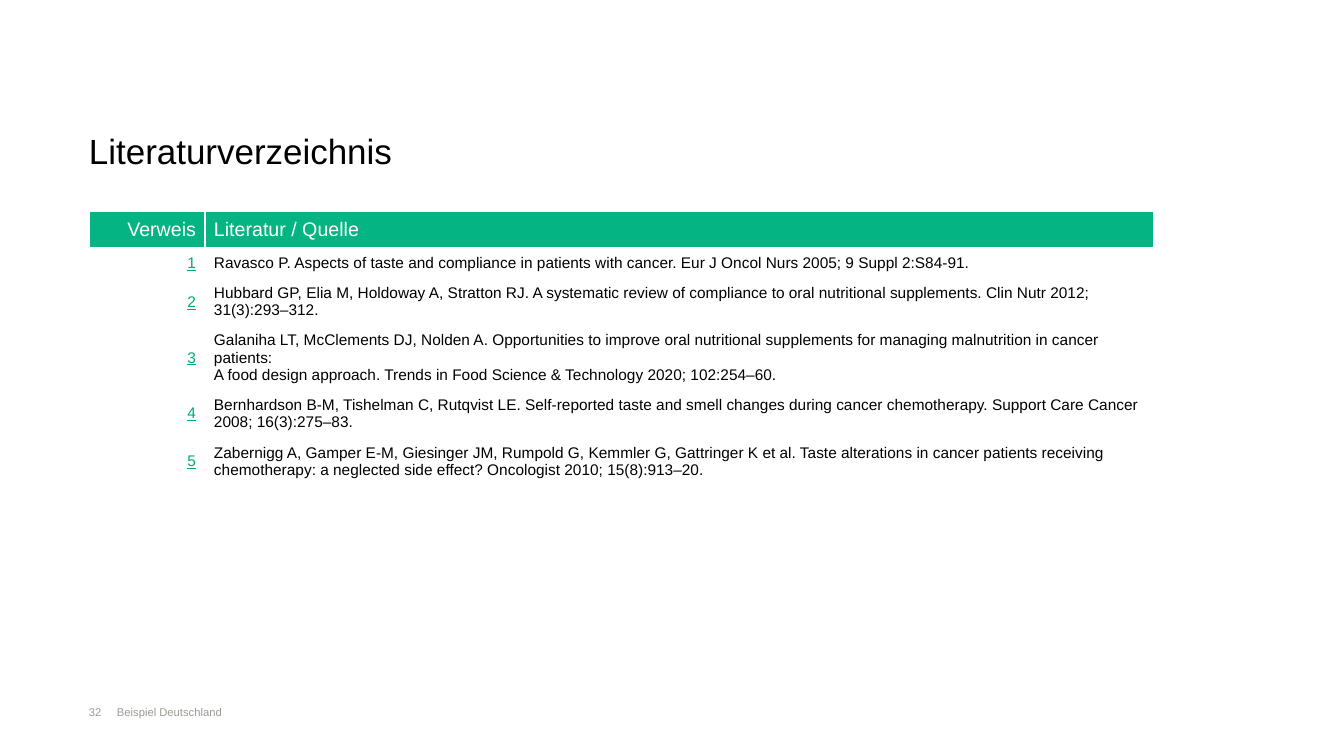
import copy
from typing import NamedTuple

import lxml.etree
import pptx
import pptx.dml.color
import pptx.enum.text
import pptx.oxml.ns
import pptx.util

PX_PER_INCH = 100.8
GREEN, LINK_GREEN, WHITE, BLACK, GREY = "04B482", "00A97A", "FFFFFF", "000000", "9C9A94"
ALIGN = pptx.enum.text.PP_ALIGN
ANCHOR = pptx.enum.text.MSO_ANCHOR


class Label(NamedTuple):
    text: str
    left: int
    top: int
    width: int
    height: int
    size: int
    color: str
    anchor: ANCHOR = ANCHOR.TOP
    line_spacing: float = 1.0


LABELS = [
    Label("Beispiel Deutschland", 117, 705, 412, 15, 8, GREY),
    Label("32", 89, 705, 27, 14, 8, GREY),
    Label("Literaturverzeichnis", 89, 77, 1190, 95, 25, BLACK, ANCHOR.BOTTOM, 1.14),
]

SOURCES = [
    "Ravasco P. Aspects of taste and compliance in patients with cancer. "
    "Eur J Oncol Nurs 2005; 9 Suppl 2:S84-91.",
    "Hubbard GP, Elia M, Holdoway A, Stratton RJ. A systematic review of compliance to oral "
    "nutritional supplements. Clin Nutr 2012;\n31(3):293–312.",
    "Galaniha LT, McClements DJ, Nolden A. Opportunities to improve oral nutritional supplements "
    "for managing malnutrition in cancer patients:\n"
    "A food design approach. Trends in Food Science & Technology 2020; 102:254–60.",
    "Bernhardson B-M, Tishelman C, Rutqvist LE. Self-reported taste and smell changes during "
    "cancer chemotherapy. Support Care Cancer 2008; 16(3):275–83.",
    "Zabernigg A, Gamper E-M, Giesinger JM, Rumpold G, Kemmler G, Gattringer K et al. "
    "Taste alterations in cancer patients receiving chemotherapy: a neglected side effect? "
    "Oncologist 2010; 15(8):913–20.",
]
COLUMN_WIDTHS = [116, 949]
ROW_HEIGHTS = [37, 30] + [48] * 4


def px(length: int) -> pptx.util.Emu:
    return pptx.util.Emu(round(length * 914400 / PX_PER_INCH))


def rgb(color: str) -> pptx.dml.color.RGBColor:
    return pptx.dml.color.RGBColor.from_string(color)


def write(frame, text: str, *, size: int, color: str, align=ALIGN.LEFT,
          underline: bool = False, line_spacing: float = 1.0) -> None:
    """Fill the first paragraph; a newline becomes a line break of the same size."""
    frame.word_wrap = True
    paragraph = frame.paragraphs[0]
    paragraph.text = text.replace("\n", "\v")
    paragraph.alignment = align
    paragraph.line_spacing = line_spacing
    for run in paragraph.runs:
        run.font.name = "Arial"
        run.font.size = pptx.util.Pt(size)
        run.font.underline = underline
        run.font.color.rgb = rgb(color)
    for line_break in paragraph._p.findall(pptx.oxml.ns.qn("a:br")):
        line_break.insert(0, copy.deepcopy(paragraph.runs[0].font._rPr))


def add_label(slide, label: Label) -> None:
    box = slide.shapes.add_textbox(*map(px, (label.left, label.top, label.width, label.height)))
    frame = box.text_frame
    frame.margin_left = frame.margin_right = frame.margin_top = frame.margin_bottom = 0
    frame.vertical_anchor = label.anchor
    write(frame, label.text, size=label.size, color=label.color,
          line_spacing=label.line_spacing)


def add_border(cell, side: str, color: str, points: float) -> None:
    """Draw one cell edge; side is L or R, and L must follow R."""
    line = lxml.etree.Element(pptx.oxml.ns.qn(f"a:ln{side}"), w=str(pptx.util.Pt(points)))
    fill = lxml.etree.SubElement(line, pptx.oxml.ns.qn("a:solidFill"))
    lxml.etree.SubElement(fill, pptx.oxml.ns.qn("a:srgbClr"), val=color)
    cell._tc.get_or_add_tcPr().insert(0, line)


def fill_cell(cell, text: str, fill: str, **text_format) -> None:
    cell.fill.solid()
    cell.fill.fore_color.rgb = rgb(fill)
    cell.vertical_anchor = ANCHOR.MIDDLE
    cell.margin_left = cell.margin_right = px(9)
    cell.margin_top = cell.margin_bottom = px(4)
    write(cell.text_frame, text, **text_format)


def add_references(slide) -> None:
    table = slide.shapes.add_table(
        len(ROW_HEIGHTS), len(COLUMN_WIDTHS), px(89), px(211),
        px(sum(COLUMN_WIDTHS)), px(sum(ROW_HEIGHTS))).table
    table.first_row = table.horz_banding = False
    for column, width in zip(table.columns, COLUMN_WIDTHS):
        column.width = px(width)
    for row, height in zip(table.rows, ROW_HEIGHTS):
        row.height = px(height)

    number_head, source_head = table.cell(0, 0), table.cell(0, 1)
    fill_cell(number_head, "Verweis", GREEN, size=14, color=WHITE, align=ALIGN.RIGHT)
    fill_cell(source_head, "Literatur / Quelle", GREEN, size=14, color=WHITE)
    for cell, sides in ((number_head, "R"), (source_head, "RL")):
        for side in sides:
            add_border(cell, side, WHITE, 2.25)

    for number, source in enumerate(SOURCES, start=1):
        fill_cell(table.cell(number, 0), str(number), WHITE, size=11, color=LINK_GREEN,
                  align=ALIGN.RIGHT, underline=True)
        fill_cell(table.cell(number, 1), source, WHITE, size=11, color=BLACK)


def main() -> None:
    presentation = pptx.Presentation()
    presentation.slide_width, presentation.slide_height = px(1344), px(756)
    slide = presentation.slides.add_slide(presentation.slide_layouts[6])
    for label in LABELS:
        add_label(slide, label)
    add_references(slide)
    presentation.save("out.pptx")


if __name__ == "__main__":
    main()
